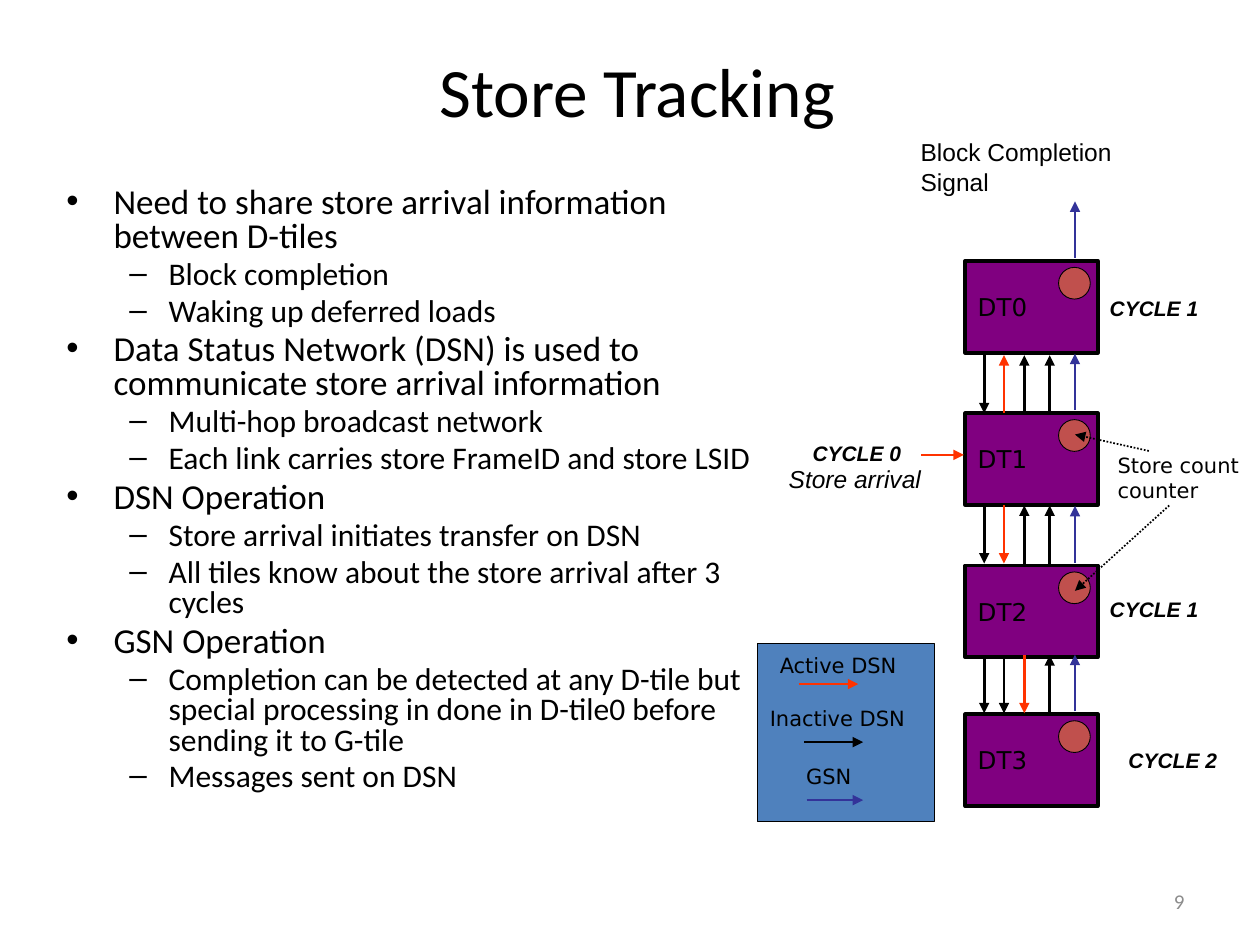
from typing import NamedTuple

from lxml import etree
from pptx import Presentation
from pptx.dml.color import RGBColor
from pptx.enum.dml import MSO_LINE
from pptx.enum.shapes import MSO_CONNECTOR, MSO_SHAPE
from pptx.enum.text import MSO_ANCHOR, MSO_AUTO_SIZE, PP_ALIGN
from pptx.oxml.ns import qn
from pptx.util import Cm, Pt

STRAIGHT = MSO_CONNECTOR.STRAIGHT
RECTANGLE, OVAL = MSO_SHAPE.RECTANGLE, MSO_SHAPE.OVAL
LEFT, CENTER, RIGHT = PP_ALIGN.LEFT, PP_ALIGN.CENTER, PP_ALIGN.RIGHT
TOP, MIDDLE = MSO_ANCHOR.TOP, MSO_ANCHOR.MIDDLE
FIT_TEXT, FIXED = MSO_AUTO_SIZE.SHAPE_TO_FIT_TEXT, MSO_AUTO_SIZE.NONE
DOTTED = MSO_LINE.ROUND_DOT

BLACK = RGBColor(0x00, 0x00, 0x00)
GRAY = RGBColor(0x8C, 0x8C, 0x8C)
PURPLE = RGBColor(0x80, 0x00, 0x80)
BRICK = RGBColor(0xC0, 0x50, 0x4D)
LEGEND_BLUE = RGBColor(0x4F, 0x81, 0xBD)
ACTIVE = RGBColor(0xFF, 0x33, 0x00)
INACTIVE = BLACK
GSN = RGBColor(0x33, 0x33, 0x99)

BODY_FONT, LABEL_FONT, TILE_FONT = "Calibri", "Arial", "DejaVu Sans"


class Box(NamedTuple):
    """Left, top, width and height in centimetres."""
    left: float
    top: float
    width: float
    height: float

    def lengths(self):
        return [Cm(value) for value in self]


class Bullet(NamedTuple):
    mark: str
    size: float
    margin: float
    hanging: float


class Link(NamedTuple):
    """One DSN link between two tiles."""
    upward: bool
    color: RGBColor


class LegendEntry(NamedTuple):
    label: str
    box: Box
    color: RGBColor
    start: float
    end: float
    y: float


TOPIC = Bullet("•", 20, 0.95, 0.95)
DETAIL = Bullet("–", 18, 2.06, 0.79)
OUTLINE = [
    (TOPIC, "Need to share store arrival information between D-tiles"),
    (DETAIL, "Block completion"),
    (DETAIL, "Waking up deferred loads"),
    (TOPIC, "Data Status Network (DSN) is used to communicate store arrival information"),
    (DETAIL, "Multi-hop broadcast network"),
    (DETAIL, "Each link carries store FrameID and store LSID"),
    (TOPIC, "DSN Operation"),
    (DETAIL, "Store arrival initiates transfer on DSN"),
    (DETAIL, "All tiles know about the store arrival after 3 cycles"),
    (TOPIC, "GSN Operation"),
    (DETAIL, "Completion can be detected at any D-tile but special processing "
             "in done in D-tile0 before sending it to G-tile"),
    (DETAIL, "Messages sent on DSN"),
]

TILE_LEFT, TILE_WIDTH, TILE_HEIGHT = 19.46, 2.67, 1.85
TILE_TOPS = [5.26, 8.33, 11.4, 14.4]
COUNTER_LEFT, COUNTER_SIZE, COUNTER_INSET = 21.34, 0.64, 0.13

DSN_LANES = [19.84, 20.24, 20.65, 21.16]
DSN_LENGTH = 1.17
GSN_LANE, GSN_LENGTH, GSN_GAP = 21.67, 1.14, 0.06
DOWN, UP = Link(False, INACTIVE), Link(True, INACTIVE)
ACTIVE_DOWN, ACTIVE_UP = Link(False, ACTIVE), Link(True, ACTIVE)
DSN_GAPS = [
    (7.16, [DOWN, ACTIVE_UP, UP, UP]),
    (10.19, [DOWN, ACTIVE_DOWN, UP, UP]),
    (13.21, [DOWN, DOWN, ACTIVE_DOWN, UP]),
]

CYCLES = [("CYCLE 0", 16.13, 8.76), ("CYCLE 1", 22.12, 5.84),
          ("CYCLE 1", 22.12, 11.91), ("CYCLE 2", 22.5, 14.94)]

LEGEND = [
    LegendEntry("Active DSN", Box(15.47, 13.03, 2.9, 0.76), ACTIVE, 16.1, 17.3, 13.79),
    LegendEntry("Inactive DSN", Box(15.27, 14.1, 3.3, 0.76), INACTIVE, 16.21, 17.4, 14.96),
    LegendEntry("GSN", Box(16, 15.27, 1.45, 0.76), GSN, 16.26, 17.4, 16.13),
]


def write(frame, lines, *, font, size, color=BLACK, bold=False, italic=False,
          align=LEFT, anchor=TOP, wrap=False, fit=FIXED):
    """Fill a text frame with one paragraph for each line."""
    frame.auto_size = fit
    frame.word_wrap = wrap
    frame.vertical_anchor = anchor
    for index, line in enumerate(lines):
        paragraph = frame.add_paragraph() if index else frame.paragraphs[0]
        paragraph.alignment = align
        run = paragraph.add_run()
        run.text = line
        run.font.name, run.font.size = font, Pt(size)
        run.font.bold, run.font.italic = bold, italic
        run.font.color.rgb = color


def add_text(slide, box: Box, *lines: str, **text_format):
    frame = slide.shapes.add_textbox(*box.lengths()).text_frame
    write(frame, lines, **text_format)
    return frame


def add_filled(slide, preset, box: Box, fill: RGBColor, line_width: float):
    shape = slide.shapes.add_shape(preset, *box.lengths())
    shape.shadow.inherit = False
    shape.fill.solid()
    shape.fill.fore_color.rgb = fill
    shape.line.color.rgb = BLACK
    shape.line.width = Pt(line_width)
    return shape


def add_arrow(slide, start: tuple, end: tuple, color: RGBColor, width=1.5, dash=None):
    arrow = slide.shapes.add_connector(STRAIGHT, *[Cm(value) for value in start + end])
    arrow.line.color.rgb = color
    arrow.line.width = Pt(width)
    if dash:
        arrow.line.dash_style = dash
    properties = arrow.line._get_or_add_ln()
    etree.SubElement(properties, qn("a:tailEnd"), type="triangle")
    etree.SubElement(arrow._element.spPr, qn("a:effectLst"))


def set_bullet(paragraph, bullet: Bullet):
    paragraph.line_spacing = 0.8
    paragraph.space_before = Pt(bullet.size * 0.2)
    paragraph.runs[0].font.size = Pt(bullet.size)
    properties = paragraph._p.get_or_add_pPr()
    properties.set("marL", str(Cm(bullet.margin)))
    properties.set("indent", str(-Cm(bullet.hanging)))
    etree.SubElement(properties, qn("a:buFont"), typeface="Arial")
    etree.SubElement(properties, qn("a:buChar"), char=bullet.mark)


def add_outline(slide):
    frame = add_text(slide, Box(1.09, 3.66, 15.04, 13.34), *[line for _, line in OUTLINE],
                     font=BODY_FONT, size=TOPIC.size, wrap=True)
    for paragraph, (bullet, _) in zip(frame.paragraphs, OUTLINE):
        paragraph.level = int(bullet is DETAIL)
        set_bullet(paragraph, bullet)


def add_legend(slide):
    add_filled(slide, RECTANGLE, Box(15.27, 12.98, 3.56, 3.58), LEGEND_BLUE, 0.5)
    for entry in LEGEND:
        add_text(slide, entry.box, entry.label, font=TILE_FONT, size=12, fit=FIT_TEXT)
        add_arrow(slide, (entry.start, entry.y), (entry.end, entry.y), entry.color)


def add_tiles(slide):
    """Draw the tile column with its store counters and network links."""
    for number, top in enumerate(TILE_TOPS):
        tile = add_filled(slide, RECTANGLE, Box(TILE_LEFT, top, TILE_WIDTH, TILE_HEIGHT),
                          PURPLE, 2.25)
        write(tile.text_frame, [f"DT{number}"], font=TILE_FONT, size=14, anchor=MIDDLE)
        add_filled(slide, OVAL, Box(COUNTER_LEFT, top + COUNTER_INSET,
                                    COUNTER_SIZE, COUNTER_SIZE), BRICK, 0.5)
    for top, links in DSN_GAPS:
        for x, link in zip(DSN_LANES, links):
            upper, lower = (x, top), (x, top + DSN_LENGTH)
            start, end = (lower, upper) if link.upward else (upper, lower)
            add_arrow(slide, start, end, link.color)
    for top in TILE_TOPS:
        start = top - GSN_GAP
        add_arrow(slide, (GSN_LANE, start), (GSN_LANE, start - GSN_LENGTH), GSN)


def add_annotations(slide):
    for label, left, top in CYCLES:
        add_text(slide, Box(left, top, 2.29, 0.76), label, font=LABEL_FONT, size=12,
                 bold=True, italic=True, fit=FIT_TEXT)
    add_text(slide, Box(15.65, 9.22, 3.18, 0.84), "Store arrival", font=LABEL_FONT,
             size=14, italic=True, fit=FIT_TEXT)
    add_arrow(slide, (18.57, 9.17), (19.43, 9.17), ACTIVE, width=0.75)
    add_text(slide, Box(18.31, 2.64, 6.88, 1.45), "Block Completion", "Signal",
             font=LABEL_FONT, size=14, wrap=True, fit=FIT_TEXT)
    add_text(slide, Box(22.28, 8.99, 3.12, 1.27), "Store count", "counter",
             font=TILE_FONT, size=12, fit=FIT_TEXT)
    for start, counter_y in [((23.16, 9.09), 8.76), ((23.57, 10.19), 11.91)]:
        add_arrow(slide, start, (GSN_LANE, counter_y), BLACK, width=1, dash=DOTTED)


def main():
    deck = Presentation()
    deck.slide_width, deck.slide_height = Cm(25.4), Cm(19.05)
    slide = deck.slides.add_slide(deck.slide_layouts[6])
    add_legend(slide)
    add_text(slide, Box(0.84, 1.07, 23.7, 1.47), " Store Tracking", font=BODY_FONT,
             size=39.6, align=CENTER, anchor=MIDDLE, wrap=True)
    add_outline(slide)
    add_tiles(slide)
    add_annotations(slide)
    add_text(slide, Box(18.21, 17.65, 5.92, 1.02), "9", font=BODY_FONT, size=12,
             color=GRAY, align=RIGHT, anchor=MIDDLE, wrap=True)
    deck.save("out.pptx")


if __name__ == "__main__":
    main()
